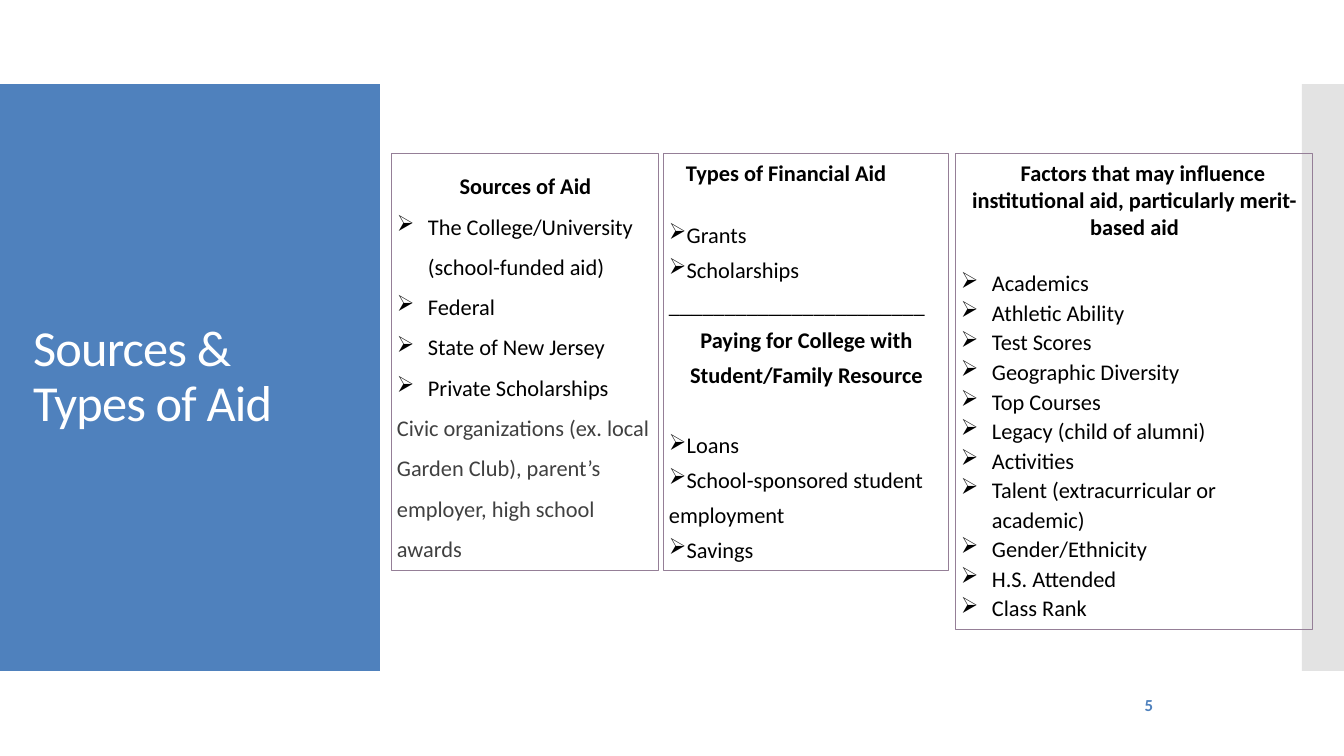
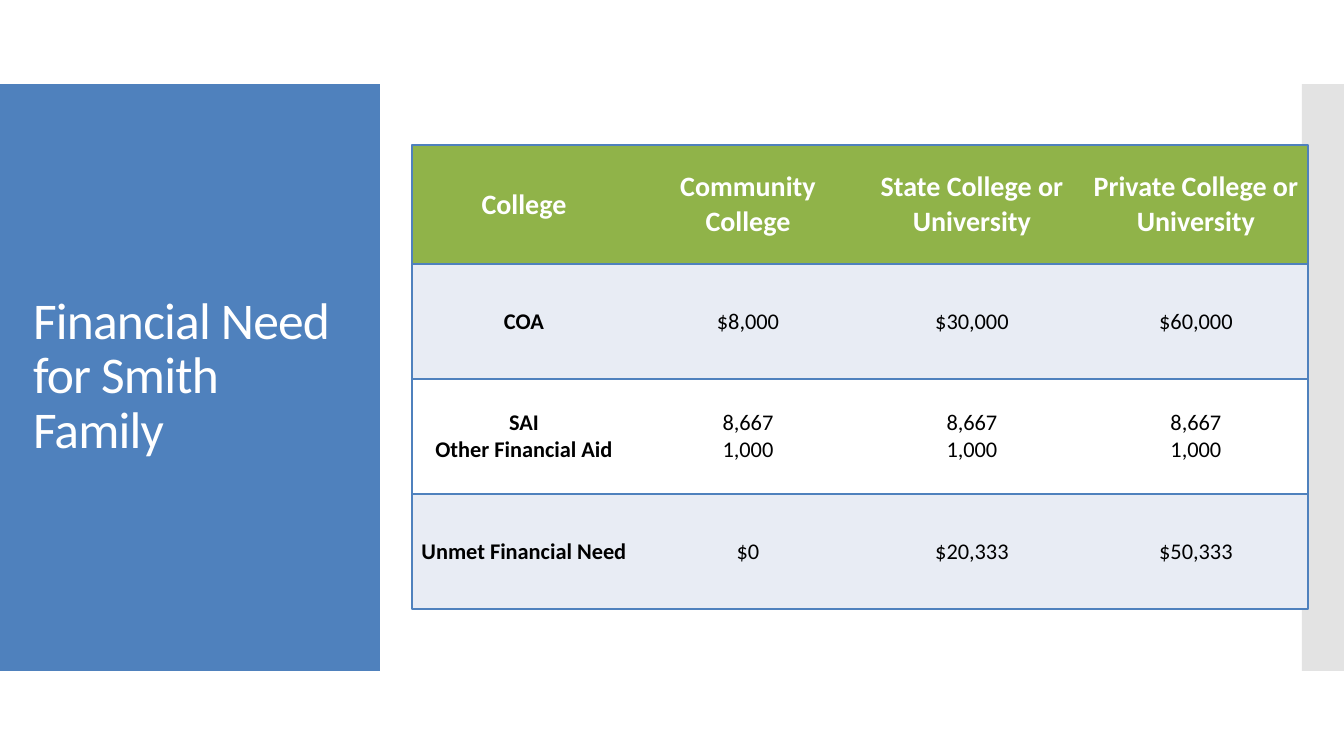
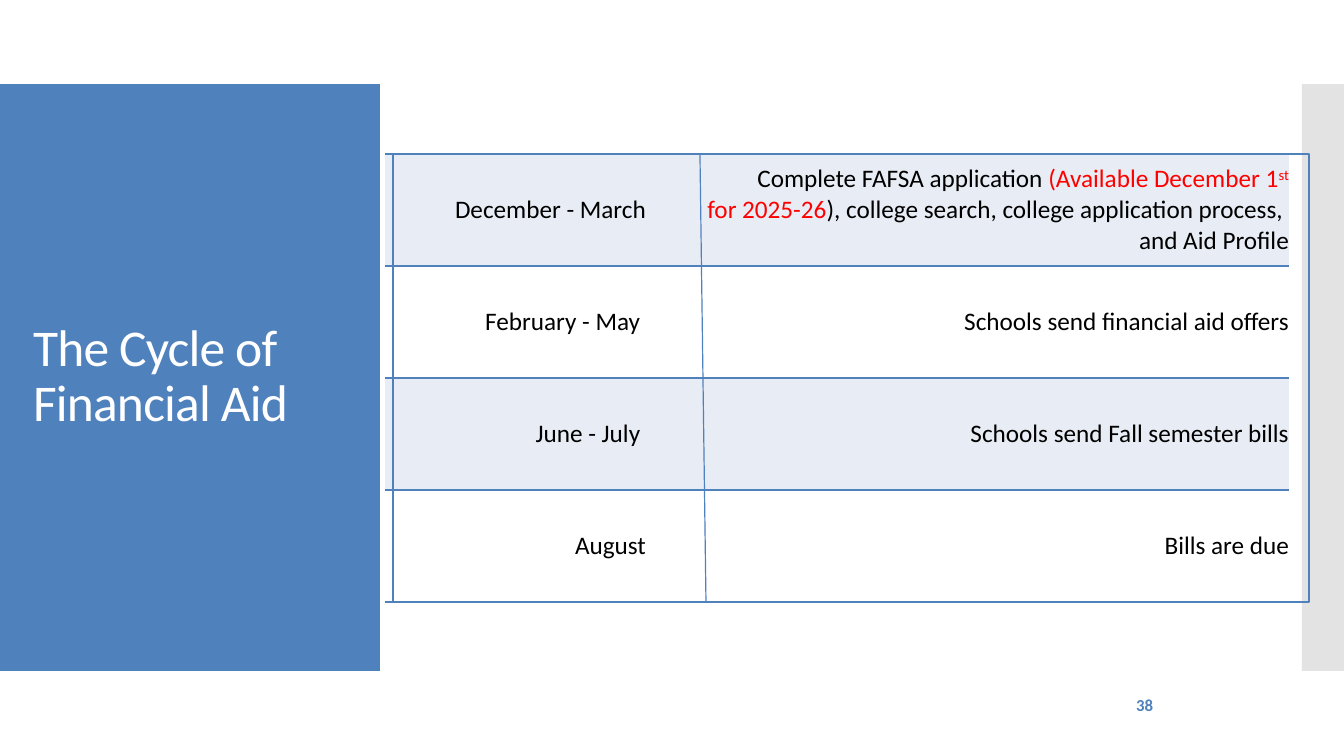
from dataclasses import dataclass, replace

from lxml.etree import SubElement
from pptx import Presentation
from pptx.dml.color import RGBColor
from pptx.enum.shapes import MSO_CONNECTOR as Connector, MSO_SHAPE as Preset
from pptx.enum.text import MSO_ANCHOR as Anchor, PP_ALIGN as Align
from pptx.oxml.ns import qn
from pptx.util import Emu, Pt

EMU_PER_PX = 914400 / 100.8
FONT = "Calibri"
PLAIN_TABLE = "{2D5ABB26-0587-4C30-8999-92F81FD0307C}"
BLUE = RGBColor(0x4F, 0x81, 0xBD)
GRAY = RGBColor(0xC8, 0xC8, 0xC8)
GREEN = RGBColor(0x90, 0xB3, 0x49)
PALE = RGBColor(0xE8, 0xEC, 0xF4)
MAUVE = RGBColor(0x95, 0x7F, 0x97)
DARK = RGBColor(0x40, 0x40, 0x40)
RED = RGBColor(0xFF, 0, 0)
BLACK = RGBColor(0, 0, 0)
WHITE = RGBColor(0xFF, 0xFF, 0xFF)


def px(length):
    return Emu(round(length * EMU_PER_PX))


def set_all(target, values):
    for name, value in values.items():
        setattr(target, name, value)


@dataclass(frozen=True)
class Style:
    size: float = 16
    bold: bool = False
    color: RGBColor = BLACK
    align: Align = Align.LEFT
    spacing: float = 1.0
    before: float = 0
    bullet: bool = False
    margin: int = 0
    indent: int = 0
    tracking: int = 0
    baseline: int = 0


class Deck:
    def __init__(self):
        self.presentation = Presentation()
        set_all(self.presentation, {"slide_width": px(1344), "slide_height": px(756)})
        self.slide = None

    def add_slide(self, title, number=None, size=36.8, spacing=0.88):
        self.slide = self.presentation.slides.add_slide(self.presentation.slide_layouts[6])
        self.rectangle((0, 84, 380, 587), fill=BLUE)
        band = self.rectangle((1302, 84, 42, 587), fill=GRAY)
        color = band.fill._xPr.find(".//" + qn("a:srgbClr"))
        SubElement(color, qn("a:alpha"), val="50000")
        style = Style(size, color=WHITE, spacing=spacing, tracking=-60)
        self.text((28, 124, 325, 507), [(title, style)])
        if number:
            self.text((1127, 690, 31, 30), [(number, Style(12, True, BLUE, Align.RIGHT))])

    def rectangle(self, box, fill=None, line=None, width=0.85):
        shape = self.slide.shapes.add_shape(Preset.RECTANGLE, *map(px, box))
        shape.shadow.inherit = False
        if fill is None:
            shape.fill.background()
        else:
            shape.fill.solid()
            shape.fill.fore_color.rgb = fill
        if line is None:
            shape.line.fill.background()
        else:
            shape.line.color.rgb = line
            shape.line.width = Pt(width)
        return shape

    def panel(self, box, paragraphs):
        shape = self.rectangle(box, line=MAUVE, width=0.75)
        self.fill_frame(shape.text_frame, paragraphs, Anchor.TOP)

    def text(self, box, paragraphs):
        shape = self.slide.shapes.add_textbox(*map(px, box))
        self.fill_frame(shape.text_frame, paragraphs, Anchor.MIDDLE)

    def fill_frame(self, frame, paragraphs, anchor):
        inset = px(5)
        set_all(frame, {"word_wrap": True, "vertical_anchor": anchor,
                        "margin_left": inset, "margin_right": inset,
                        "margin_top": inset, "margin_bottom": inset})
        self.add_paragraphs(frame, paragraphs)

    def add_paragraphs(self, frame, paragraphs):
        for index, (content, style) in enumerate(paragraphs):
            paragraph = frame.add_paragraph() if index else frame.paragraphs[0]
            set_all(paragraph, {"alignment": style.align, "line_spacing": style.spacing,
                                "space_before": Pt(style.before)})
            properties = paragraph._p.get_or_add_pPr()
            properties.set("marL", str(px(style.margin)))
            properties.set("indent", str(px(style.indent)))
            if style.bullet:
                SubElement(properties, qn("a:buChar"), char="➢")
            runs = [(content, style)] if isinstance(content, str) else content
            for text, run_style in runs:
                self.add_run(paragraph, text, run_style)

    def add_run(self, paragraph, text, style):
        run = paragraph.add_run()
        run.text = text
        set_all(run.font, {"name": FONT, "size": Pt(style.size), "bold": style.bold})
        run.font.color.rgb = style.color
        for name, value in (("spc", style.tracking), ("baseline", style.baseline)):
            if value:
                run._r.get_or_add_rPr().set(name, str(value))

    def table(self, origin, widths, heights, rows, fills, inset):
        box = (*origin, sum(widths), sum(heights))
        table = self.slide.shapes.add_table(len(rows), len(widths), *map(px, box)).table
        set_all(table, {"first_row": False, "horz_banding": False})
        table._tbl.tblPr.find(qn("a:tableStyleId")).text = PLAIN_TABLE
        for column, width in zip(table.columns, widths):
            column.width = px(width)
        for row, height, cells, fill in zip(table.rows, heights, rows, fills):
            row.height = px(height)
            for cell, paragraphs in zip(row.cells, cells):
                self.format_cell(cell, fill, inset)
                self.add_paragraphs(cell.text_frame, paragraphs)

    def format_cell(self, cell, fill, inset):
        margin = px(inset)
        set_all(cell, {"vertical_anchor": Anchor.MIDDLE,
                       "margin_left": margin, "margin_right": margin,
                       "margin_top": margin, "margin_bottom": margin})
        properties = cell._tc.get_or_add_tcPr()
        for side in ("a:lnT", "a:lnB"):
            border = SubElement(properties, qn(side), w=str(Pt(1)))
            solid = SubElement(border, qn("a:solidFill"))
            SubElement(solid, qn("a:srgbClr"), val=str(BLUE))
        cell.fill.solid()
        cell.fill.fore_color.rgb = fill

    def line(self, start, end):
        connector = self.slide.shapes.add_connector(Connector.STRAIGHT, *map(px, start + end))
        connector.line.color.rgb = BLUE
        connector.line.width = Pt(0.85)
        SubElement(connector._element.spPr, qn("a:effectLst"))


def bullets(items, style, before=0):
    return [(item, replace(style, before=0 if index else before))
            for index, item in enumerate(items)]


def add_sources(deck):
    deck.add_slide("Sources & Types of Aid", "5", 36, 0.9)
    heading = Style(bold=True, align=Align.CENTER)
    hanging = Style(bullet=True, margin=31, indent=-31)

    sources = ["The College/University (school-funded aid)", "Federal",
               "State of New Jersey", "Private Scholarships"]
    deck.panel((392, 154, 267, 417), [
        ("Sources of Aid", replace(heading, spacing=1.5)),
        *bullets(sources, replace(hanging, spacing=1.5)),
        ("Civic organizations (ex. local Garden Club), parent’s employer, high school awards",
         Style(color=DARK, spacing=1.5)),
    ])

    flush = Style(bullet=True, spacing=1.3)
    own_funds = ["Loans", "School-sponsored student employment", "Savings"]
    deck.panel((664, 154, 285, 417), [
        ("Types of Financial Aid", Style(bold=True, indent=17)),
        *bullets(["Grants", "Scholarships"], flush, before=19.5),
        ("_" * 23, Style(spacing=1.3)),
        ("Paying for College with Student/Family Resource", replace(heading, spacing=1.3)),
        *bullets(own_funds, flush, before=25.4),
    ])

    factors = ["Academics", "Athletic Ability", "Test Scores", "Geographic Diversity",
               "Top Courses", "Legacy (child of alumni)", "Activities",
               "Talent (extracurricular or academic)", "Gender/Ethnicity",
               "H.S. Attended", "Class Rank"]
    deck.panel((956, 154, 357, 476), [
        ("Factors that may influence institutional aid, particularly merit-based aid",
         replace(heading, indent=17)),
        *bullets(factors, replace(hanging, spacing=1.1), before=19.5),
    ])


def add_need(deck):
    deck.add_slide("Financial Need for Smith Family")
    header = Style(20, True, WHITE, Align.CENTER)
    value = Style(align=Align.CENTER)
    label = replace(value, bold=True)
    headings = ["College", "Community College", "State College or University",
                "Private College or University"]
    data = [
        [["COA"], ["$8,000"], ["$30,000"], ["$60,000"]],
        [["SAI", "Other Financial Aid"]] + [["8,667", "1,000"]] * 3,
        [["Unmet Financial Need"], ["$0"], ["$20,333"], ["$50,333"]],
    ]
    rows = [[[(text, header)] for text in headings]]
    for cells in data:
        rows.append([[(text, value if column else label) for text in lines]
                     for column, lines in enumerate(cells)])
    deck.table((412, 145), [224] * 4, [119] + [115] * 3, rows, [GREEN, PALE, WHITE, PALE], 5)
    deck.rectangle((412, 145, 896, 464), line=BLUE)


def add_cycle(deck):
    deck.add_slide("The Cycle of Financial Aid", "38")
    body = Style(18, align=Align.RIGHT)
    red = replace(body, color=RED)
    application = [
        ([("Complete FAFSA application ", body), ("(Available December 1", red),
          ("st", replace(red, baseline=30000))], body),
        ([("for 2025-26", red),
          ("), college search, college application process, ", body)], body),
        ("and Aid Profile", body),
    ]
    steps = [
        ("December - March", application),
        ("February - May ", [("Schools send financial aid offers", body)]),
        ("June - July ", [("Schools send Fall semester bills", body)]),
        ("August", [("Bills are due", body)]),
    ]
    rows = [[[(period, body)], action] for period, action in steps]
    deck.table((385, 154), [261, 643], [112] * 4, rows, [PALE, WHITE] * 2, 0)
    deck.rectangle((393, 154, 916, 448), line=BLUE)
    deck.line((700, 154), (706, 602))


def main():
    deck = Deck()
    add_sources(deck)
    add_need(deck)
    add_cycle(deck)
    deck.presentation.save("out.pptx")


if __name__ == "__main__":
    main()
